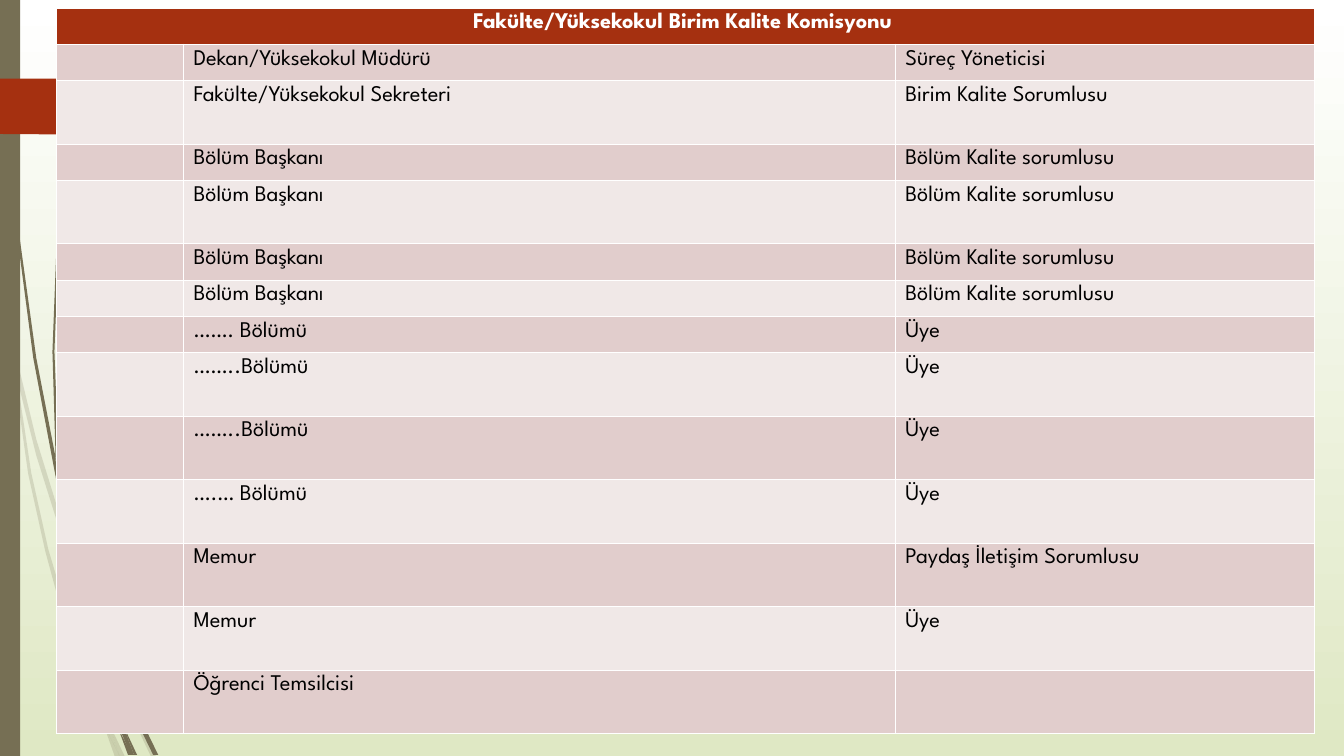
"""Build the faculty quality commission slide: a full-page table over a grassy backdrop."""
from lxml.etree import SubElement
from pptx import Presentation
from pptx.dml.color import RGBColor
from pptx.enum.shapes import MSO_SHAPE
from pptx.enum.text import PP_ALIGN
from pptx.oxml.ns import qn
from pptx.util import Inches, Pt

THEME = {
    "font": "League Spartan",
    "size": Pt(16),
    "white": RGBColor.from_string("FFFFFF"),
    "black": RGBColor.from_string("000000"),
    "meadow": RGBColor.from_string("DFE8C4"),
    "olive": RGBColor.from_string("766F54"),
    "rust": RGBColor.from_string("A53010"),
    "bands": [RGBColor.from_string("F0E8E7"), RGBColor.from_string("E1CDCC")],
}

FAINT_BLADES = [
    [(0.11, 3.5), (0.09, 3.22), (0, 2.82), (0, 2.99), (0.1, 3.44)],
    [(0.58, 5.22), (0.84, 5.99), (0.85, 5.86), (0.62, 5.2), (0.36, 4.36),
     (0.14, 3.45), (0.17, 3.76), (0.36, 4.52)],
    [(0.92, 6.07), (0.88, 5.96), (0.88, 6.1), (1.23, 6.94), (1.5, 7.51),
     (1.55, 7.51), (1.27, 6.92)],
    [(1.19, 7.51), (1.24, 7.51), (1.05, 7.11)],
    [(0.93, 6.83), (0.7, 6.19), (0.48, 5.45), (0.31, 4.69), (0.17, 3.76),
     (0.11, 3.5), (0.28, 4.7), (0.45, 5.47), (0.65, 6.21), (0.92, 6.93),
     (1.01, 7.14), (0.99, 7.07)],
    [(1.01, 7.14), (1.14, 7.51), (1.19, 7.51)],
    [(0.96, 6.92), (0.93, 6.83), (0.99, 7.07), (1.01, 7.14), (1.19, 7.51), (1.05, 7.11)],
]
DARK_BLADES = [
    [(0.07, 1.1), (0.17, 2.33), (0.33, 3.55), (0.56, 4.77), (0.57, 4.81),
     (0.55, 4.53), (0.36, 3.55), (0.19, 2.32), (0.08, 1.09), (0.05, 0.48),
     (0.04, 0), (0.03, 0), (0.04, 0.48)],
    [(0.6, 4.72), (0.58, 4.53), (0.54, 3.49), (0.58, 2.45), (0.63, 1.93),
     (0.7, 1.41), (0.62, 1.93), (0.56, 2.45), (0.52, 3.49), (0.55, 4.49)],
    [(0.57, 4.77), (0.64, 5.05), (0.6, 4.72), (0.55, 4.49), (0.55, 4.53)],
    [(1.13, 6.49), (1.1, 6.41), (1.11, 6.56), (1.32, 7.08), (1.52, 7.49),
     (1.57, 7.49), (1.36, 7.06)],
    [(1.33, 7.49), (1.36, 7.49), (1.22, 7.19)],
    [(1.17, 7.22), (1.27, 7.49), (1.31, 7.49)],
    [(1.16, 7.06), (1.1, 6.91), (1.16, 7.17), (1.3, 7.49), (1.33, 7.49), (1.22, 7.19)],
]
TAB_OUTLINE = [(1.73, 1.08), (1.48, 1.33), (1.46, 1.34), (0, 1.33), (0, 0.78),
               (1.46, 0.78), (1.48, 0.79), (1.73, 1.04), (1.74, 1.06)]

SHORT, TALL = 0.36, 0.63
COLUMN_WIDTHS = [1.26, 7.06, 4.16]
HEADING = "Fakülte/Yüksekokul Birim Kalite Komisyonu "
CHAIR = ("Bölüm Başkanı", "Bölüm Kalite sorumlusu")
MEMBERS = [
    (SHORT, "Dekan/Yüksekokul Müdürü", "Süreç Yöneticisi"),
    (TALL, "Fakülte/Yüksekokul Sekreteri", "Birim Kalite Sorumlusu"),
    (SHORT, *CHAIR),
    (TALL, *CHAIR),
    (SHORT, *CHAIR),
    (SHORT, *CHAIR),
    (SHORT, "……. Bölümü", "Üye"),
    (TALL, "……..Bölümü", "Üye"),
    (TALL, "……..Bölümü", "Üye"),
    (TALL, "….… Bölümü", "Üye"),
    (TALL, "Memur", "Paydaş İletişim Sorumlusu"),
    (TALL, "Memur", "Üye"),
    (TALL, "Öğrenci Temsilcisi", ""),
]


def paint(shape, color, opacity=100):
    """Give a shape a plain fill with no outline or shadow."""
    shape.shadow.inherit = False
    shape.line.fill.background()
    shape.fill.solid()
    shape.fill.fore_color.rgb = color
    if opacity < 100:
        tint = shape.fill._xPr.find(qn("a:solidFill"))[0]
        SubElement(tint, qn("a:alpha"), val=str(opacity * 1000))


def write_cell(cell, text, fill, color, bold=False, align=PP_ALIGN.LEFT):
    """Fill a table cell and set its text in the theme font."""
    cell.fill.solid()
    cell.fill.fore_color.rgb = fill
    para = cell.text_frame.paragraphs[0]
    para.alignment = align
    if text:
        span = para.add_run()
        span.text = text
        span.font.color.rgb = color
        formats = {"name": THEME["font"], "size": THEME["size"], "bold": bold}
        for name, value in formats.items():
            setattr(span.font, name, value)
    ending = SubElement(para._p, qn("a:endParaRPr"), sz=str(int(THEME["size"].pt * 100)))
    SubElement(ending, qn("a:latin"), typeface=THEME["font"])


deck = Presentation()
deck.slide_width, deck.slide_height = Inches(13.33), Inches(7.5)
page = deck.slides.add_slide(deck.slide_layouts[6])

backdrop = page.background.fill
backdrop.gradient()
backdrop.gradient_angle = 270
for stop, color in zip(backdrop.gradient_stops, ("white", "meadow")):
    stop.color.rgb = THEME[color]

outlines = [(blade, "olive", 20) for blade in FAINT_BLADES]
outlines += [(blade, "olive", 100) for blade in DARK_BLADES]
outlines.append((TAB_OUTLINE, "rust", 100))
for outline, color, opacity in outlines:
    points = [(Inches(x), Inches(y)) for x, y in outline]
    builder = page.shapes.build_freeform(*points[0])
    builder.add_line_segments(points[1:], close=True)
    paint(builder.convert_to_shape(), THEME[color], opacity)
    if outline is DARK_BLADES[-1]:
        side_bar = page.shapes.add_shape(MSO_SHAPE.RECTANGLE, 0, 0, Inches(0.2), Inches(7.5))
        paint(side_bar, THEME["olive"])

heights = [SHORT] + [member[0] for member in MEMBERS]
table = page.shapes.add_table(
    len(heights), len(COLUMN_WIDTHS), Inches(0.56), Inches(0.08),
    Inches(sum(COLUMN_WIDTHS)), Inches(sum(heights))).table
for column, width in zip(table.columns, COLUMN_WIDTHS):
    column.width = Inches(width)
for row, height in zip(table.rows, heights):
    row.height = Inches(height)

for index, text in enumerate((HEADING, "", "")):
    write_cell(table.cell(0, index), text, THEME["rust"], THEME["white"], True, PP_ALIGN.CENTER)
table.cell(0, 0).merge(table.cell(0, 2))
for number, (_, post, duty) in enumerate(MEMBERS, 1):
    for index, text in enumerate(("", post, duty)):
        write_cell(table.cell(number, index), text, THEME["bands"][number % 2], THEME["black"])

deck.save("out.pptx")
